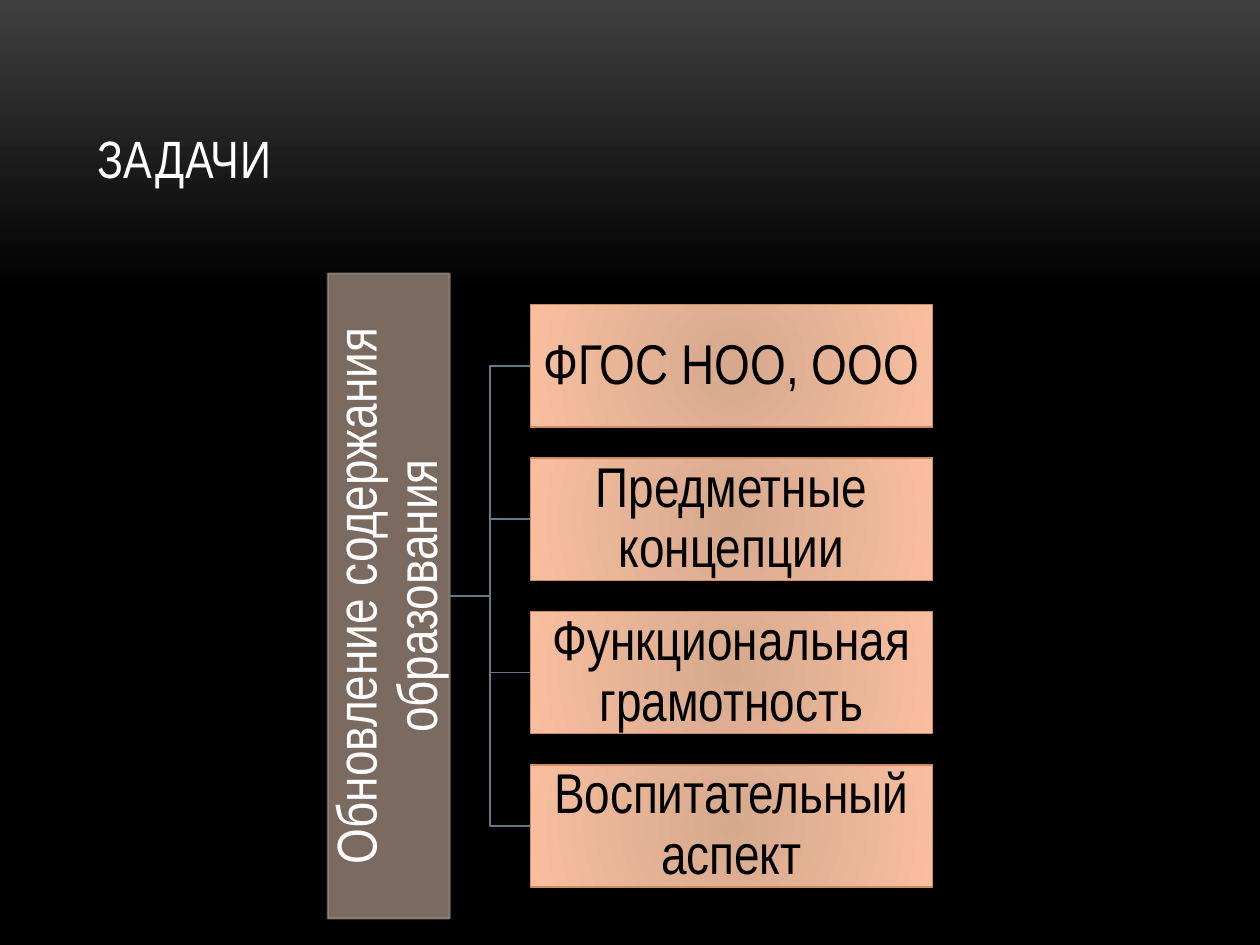
from lxml import etree
from pptx import Presentation
from pptx.dml.color import RGBColor as RGB
from pptx.enum.shapes import MSO_CONNECTOR as LINK, MSO_SHAPE as SHAPE
from pptx.enum.text import MSO_ANCHOR as ANCHOR, MSO_AUTO_SIZE as AUTO, PP_ALIGN as ALIGN
from pptx.oxml import parse_xml
from pptx.oxml.ns import nsdecls, qn
from pptx.util import Inches, Pt

# Content
TITLE = "ЗАДАЧИ"
ROOT = "Обновление содержания образования"
TASKS = [
    "ФГОС НОО, ООО",
    "Предметные концепции",
    "Функциональная грамотность",
    "Воспитательный аспект",
]

# Style
FONT = "Arial Narrow"
WHITE = RGB(0xFF, 0xFF, 0xFF)
BLACK = RGB(0, 0, 0)
GREY = RGB(0x3F, 0x3F, 0x3F)
BROWN = RGB(0x7A, 0x6A, 0x60)
TAN = RGB(0xD6, 0xA9, 0x8D)
PEACH = RGB(0xF8, 0xBE, 0x9F)
RIM = RGB(0xCC, 0x8E, 0x60)
SLATE = RGB(0x65, 0x79, 0x8B)

# Grid in inches: one tall root, then a column of equal rows
ROOT_X, ROOT_Y, ROOT_H = 2.6, 2.17, 5.12
BOX_X, BOX_W, BOX_H = 4.21, 3.19, 0.97
STEP = BOX_H * 1.255
MID = ROOT_Y + ROOT_H / 2
TOP = MID - ((len(TASKS) - 1) * STEP + BOX_H) / 2


def set_grad(fill, node, stops, way):
    """Fill node with a gradient of (percent, colour) stops."""
    fill.gradient()
    old = node.find(qn("a:gradFill"))
    marks = "".join(
        f'<a:gs pos="{pos * 1000}"><a:srgbClr val="{tone}"/></a:gs>'
        for pos, tone in stops
    )
    new = parse_xml(
        f'<a:gradFill {nsdecls("a")} rotWithShape="1">'
        f"<a:gsLst>{marks}</a:gsLst>{way}</a:gradFill>"
    )
    node.replace(old, new)


def set_font(par, size, tone):
    for run in par.runs:
        run.font.name = FONT
        run.font.size = Pt(size)
        run.font.color.rgb = tone


def add_box(slide, text, x, y, w, h, tone, rim, width):
    box = slide.shapes.add_shape(SHAPE.RECTANGLE, *map(Inches, (x, y, w, h)))
    box.shadow.inherit = False
    box.line.color.rgb = rim
    box.line.width = Pt(width)
    frame = box.text_frame
    frame.text = text
    frame.word_wrap = True
    frame.vertical_anchor = ANCHOR.MIDDLE
    frame.margin_left = frame.margin_right = Inches(0.02)
    frame.margin_top = frame.margin_bottom = Inches(0.02)
    par = frame.paragraphs[0]
    par.alignment = ALIGN.CENTER
    par.line_spacing = 0.9
    set_font(par, 32, tone)
    return box


def add_link(slide, start, end):
    link = slide.shapes.add_connector(LINK.ELBOW, 0, 0, 0, 0)
    link.begin_connect(start, 3)
    link.end_connect(end, 1)
    link.line.color.rgb = SLATE
    link.line.width = Pt(0.85)
    etree.SubElement(link._element.spPr, qn("a:effectLst"))


def main():
    deck = Presentation()
    deck.slide_width, deck.slide_height = Inches(10), Inches(7.5)
    slide = deck.slides.add_slide(deck.slide_layouts[5])

    # Background
    fill = slide.background.fill
    fill.gradient()
    back = slide._element.cSld.find(qn("p:bg")).find(qn("p:bgPr"))
    set_grad(fill, back, [(0, GREY), (31, BLACK), (100, BLACK)],
             '<a:lin ang="5400000" scaled="0"/>')

    # Title
    title = slide.shapes.title
    title.left, title.top = Inches(0.67), Inches(0.3)
    title.width, title.height = Inches(8.67), Inches(1.25)
    frame = title.text_frame
    frame.text = TITLE
    frame.auto_size = AUTO.NONE
    frame.vertical_anchor = ANCHOR.BOTTOM
    head = frame.paragraphs[0]
    head.alignment = ALIGN.LEFT
    set_font(head, 30, WHITE)
    head.runs[0].font._element.set("spc", "50")

    # Root with upward text and a faint rim
    root = add_box(slide, ROOT, ROOT_X, ROOT_Y, BOX_H, ROOT_H, WHITE, WHITE, 1.2)
    root.fill.solid()
    root.fill.fore_color.rgb = BROWN
    root.text_frame._txBody.bodyPr.set("vert", "vert270")
    rim = root.line._ln.find(".//" + qn("a:srgbClr"))
    etree.SubElement(rim, qn("a:alpha")).set("val", "25000")

    # Tasks, each joined to the root
    for row, text in enumerate(TASKS):
        box = add_box(slide, text, BOX_X, TOP + row * STEP, BOX_W, BOX_H,
                      BLACK, RIM, 0.75)
        set_grad(box.fill, box._element.spPr, [(0, TAN), (100, PEACH)],
                 '<a:path path="circle"><a:fillToRect l="100000" t="100000" '
                 'r="100000" b="100000"/></a:path>')
        add_link(slide, root, box)

    deck.save("out.pptx")


if __name__ == "__main__":
    main()
